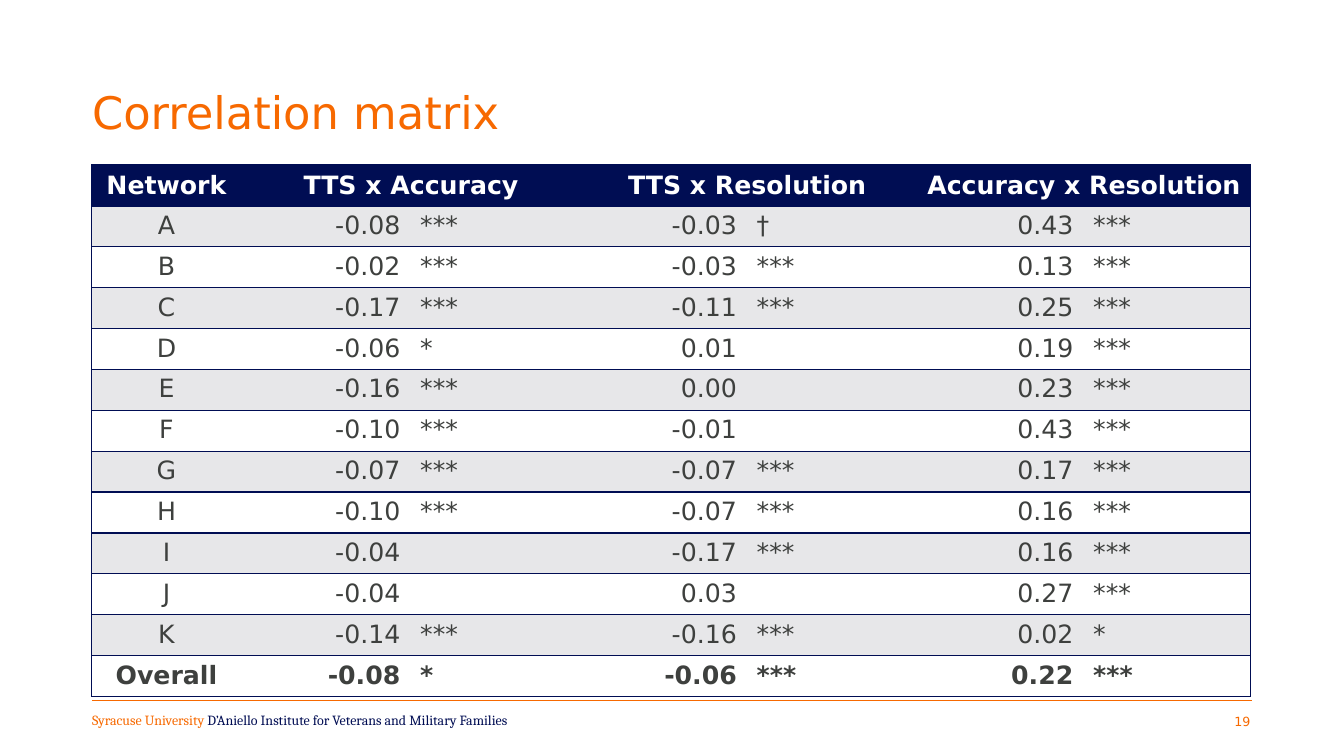
from lxml import etree
from pptx import Presentation
from pptx.dml.color import RGBColor
from pptx.enum.shapes import MSO_CONNECTOR
from pptx.enum.text import MSO_ANCHOR, MSO_AUTO_SIZE, PP_ALIGN
from pptx.oxml.ns import qn
from pptx.util import Cm, Pt

LEFT, CENTER, RIGHT = PP_ALIGN.LEFT, PP_ALIGN.CENTER, PP_ALIGN.RIGHT
STRAIGHT = MSO_CONNECTOR.STRAIGHT
TOP = MSO_ANCHOR.TOP
NO_FIT = MSO_AUTO_SIZE.NONE

# Content
TITLE = "Correlation matrix"
FOOTER = [("Syracuse University ", "orange"),
          ("D’Aniello Institute for Veterans and Military Families", "navy")]
PAGE_NUMBER = "19"
HEADERS = ["Network", "TTS x Accuracy", "TTS x Resolution", "Accuracy x Resolution"]
ROWS = [
    ("A", "-0.08", "***", "-0.03", "†", "0.43", "***"),
    ("B", "-0.02", "***", "-0.03", "***", "0.13", "***"),
    ("C", "-0.17", "***", "-0.11", "***", "0.25", "***"),
    ("D", "-0.06", "*", "0.01", "", "0.19", "***"),
    ("E", "-0.16", "***", "0.00", "", "0.23", "***"),
    ("F", "-0.10", "***", "-0.01", "", "0.43", "***"),
    ("G", "-0.07", "***", "-0.07", "***", "0.17", "***"),
    ("H", "-0.10", "***", "-0.07", "***", "0.16", "***"),
    ("I", "-0.04", "", "-0.17", "***", "0.16", "***"),
    ("J", "-0.04", "", "0.03", "", "0.27", "***"),
    ("K", "-0.14", "***", "-0.16", "***", "0.02", "*"),
    ("Overall", "-0.08", "*", "-0.06", "***", "0.22", "***"),
]

# Look
COLORS = {"orange": "F76900", "navy": "000D53", "white": "FFFFFF",
          "gray": "E7E7E9", "text": "3E403E"}
SANS, SERIF = "DejaVu Sans", "Cambria"
NO_STYLE = "{2D5ABB26-0587-4C30-8999-92F81FD0307C}"
COLUMN_WIDTHS = [4.37, 3.66, 4.09, 4.39, 3.76, 4.72, 4.22]
HEADER_INDENTS = [0, 0.97, 1.4, 0.79]
ROW_HEIGHT = 1.03
TABLE_LEFT, TABLE_TOP = 2.31, 4.16
NETWORK_MARGIN, VALUE_GAP = 0.6, 0.25
BORDER_WIDTH = Pt(1)


def rgb(name):
    return RGBColor.from_string(COLORS[name])


def style_font(font, name, size, color, bold=False):
    font.name, font.size, font.bold = name, Pt(size), bold
    font.color.rgb = rgb(color)


def set_frame(frame, left=0, top=0):
    frame.word_wrap = True
    frame.auto_size = NO_FIT
    frame.vertical_anchor = TOP
    frame.margin_left, frame.margin_top = Cm(left), Cm(top)
    frame.margin_right = frame.margin_bottom = 0


def add_borders(cell, sides):
    properties = cell._tc.get_or_add_tcPr()
    for side in sides:
        line = etree.SubElement(properties, qn(f"a:ln{side}"), w=str(BORDER_WIDTH))
        fill = etree.SubElement(line, qn("a:solidFill"))
        etree.SubElement(fill, qn("a:srgbClr"), val=COLORS["navy"])


def fill_cell(cell, text, color, fill, align, left=0, right=0, top=0.13, bold=False):
    cell.margin_left, cell.margin_right = Cm(left), Cm(right)
    cell.margin_top, cell.margin_bottom = Cm(top), 0
    cell.vertical_anchor = TOP
    if fill:
        cell.fill.solid()
        cell.fill.fore_color.rgb = rgb(fill)
    else:
        cell.fill.background()
    para = cell.text_frame.paragraphs[0]
    para.text = text
    para.alignment = align
    style_font(para.font, SANS, 18, color, bold)


def add_table(page):
    frame = page.shapes.add_table(
        len(ROWS) + 1, len(COLUMN_WIDTHS), Cm(TABLE_LEFT), Cm(TABLE_TOP),
        Cm(sum(COLUMN_WIDTHS)), Cm(ROW_HEIGHT * (len(ROWS) + 1)))
    table = frame.table
    table._tbl.tblPr.find(qn("a:tableStyleId")).text = NO_STYLE
    for column, width in zip(table.columns, COLUMN_WIDTHS):
        column.width = Cm(width)
    for row in table.rows:
        row.height = Cm(ROW_HEIGHT)

    # Borders: every row line, plus the outer sides
    last = len(COLUMN_WIDTHS) - 1
    for row in table.rows:
        for index, cell in enumerate(row.cells):
            add_borders(cell, {0: "LTB", last: "RTB"}.get(index, "TB"))

    # Header: each measure spans a value column and a significance column
    for index, (header, indent) in enumerate(zip(HEADERS, HEADER_INDENTS)):
        start = max(0, 2 * index - 1)
        cell = table.cell(0, start)
        if index:
            cell.merge(table.cell(0, start + 1))
        fill_cell(cell, header, "white", "navy", LEFT if index else CENTER,
                  left=indent, right=0 if index else NETWORK_MARGIN, top=0.15, bold=True)

    # Body: values right-aligned against their significance marks
    for number, values in enumerate(ROWS, 1):
        for index, text in enumerate(values):
            if index == 0:
                align, left, right = CENTER, 0, NETWORK_MARGIN
            elif index % 2:
                align, left, right = RIGHT, 0, VALUE_GAP
            else:
                align, left, right = LEFT, VALUE_GAP, 0
            fill_cell(table.cell(number, index), text, "text",
                      "gray" if number % 2 else None, align, left, right,
                      bold=number == len(ROWS))


def main():
    deck = Presentation()
    deck.slide_width, deck.slide_height = Cm(33.87), Cm(19.05)
    page = deck.slides.add_slide(deck.slide_layouts[5])

    # Title
    title = page.shapes.title
    title.left, title.top, title.width, title.height = Cm(2.29), Cm(2.06), Cm(23.72), Cm(1.42)
    set_frame(title.text_frame, left=0.03, top=0.07)
    para = title.text_frame.paragraphs[0]
    para.text = TITLE
    para.alignment = LEFT
    style_font(para.font, SANS, 32, "orange")

    add_table(page)

    # Footer rule
    rule = page.shapes.add_connector(STRAIGHT, Cm(2.33), Cm(17.65), Cm(31.55), Cm(17.65))
    rule.line.color.rgb = rgb("orange")
    rule.line.width = Pt(0.5)
    etree.SubElement(rule._element.spPr, qn("a:effectLst"))

    # Footer text
    box = page.shapes.add_textbox(Cm(2.29), Cm(17.93), Cm(11.53), Cm(0.48))
    set_frame(box.text_frame, left=0.03)
    para = box.text_frame.paragraphs[0]
    for text, color in FOOTER:
        span = para.add_run()
        span.text = text
        span.font.color.rgb = rgb(color)
    para.font.name, para.font.size = SERIF, Pt(10)

    # Page number
    box = page.shapes.add_textbox(Cm(31.01), Cm(17.93), Cm(0.66), Cm(0.46))
    set_frame(box.text_frame, left=0.1, top=0.06)
    para = box.text_frame.paragraphs[0]
    para.text = PAGE_NUMBER
    style_font(para.font, SANS, 9, "orange")

    deck.save("out.pptx")


if __name__ == "__main__":
    main()
